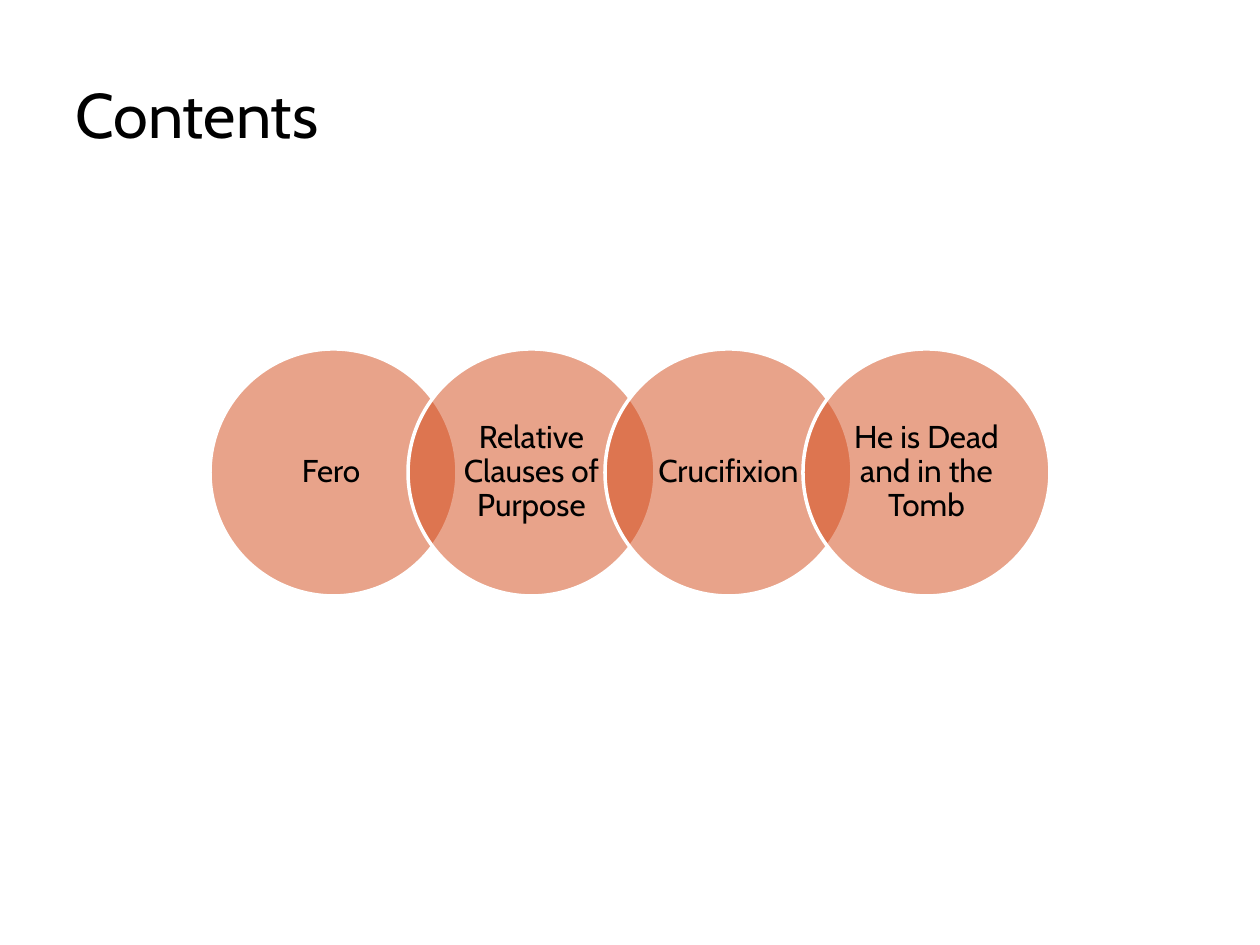
"""Build the Contents slide: a title above four overlapping topic circles."""
from dataclasses import dataclass

from lxml import etree
from pptx import Presentation
from pptx.dml.color import RGBColor
from pptx.enum.shapes import MSO_SHAPE
from pptx.enum.text import MSO_ANCHOR, MSO_AUTO_SIZE, PP_ALIGN
from pptx.oxml.ns import qn
from pptx.shapes.shapetree import GroupShapes
from pptx.text.text import TextFrame
from pptx.util import Emu, Pt

OVAL = MSO_SHAPE.OVAL
MIDDLE, BOTTOM = MSO_ANCHOR.MIDDLE, MSO_ANCHOR.BOTTOM
LEFT, CENTER = PP_ALIGN.LEFT, PP_ALIGN.CENTER
NO_FIT = MSO_AUTO_SIZE.NONE

BLACK = RGBColor(0x00, 0x00, 0x00)
WHITE = RGBColor(0xFF, 0xFF, 0xFF)
ORANGE = RGBColor(0xD3, 0x48, 0x17)
FONT = "Cabin"
PX_PER_INCH = 126

CIRCLE_LEFT, CIRCLE_TOP, CIRCLE_SIZE = 210, 349, 247
CIRCLE_STEP = 0.8 * CIRCLE_SIZE
LABEL_INSET = 36
TOPICS = ("Fero\t", "Relative Clauses of Purpose", "Crucifixion", "He is Dead and in the Tomb")


@dataclass(frozen=True)
class Box:
    left: int
    top: int
    width: int
    height: int

    def emu(self) -> tuple[Emu, Emu, Emu, Emu]:
        return px(self.left), px(self.top), px(self.width), px(self.height)

    def inset(self, by: int) -> "Box":
        return Box(self.left + by, self.top + by, self.width - 2 * by, self.height - 2 * by)


@dataclass(frozen=True)
class Topic:
    text: str
    box: Box


def px(n: int) -> Emu:
    return Emu(round(n * 914400 / PX_PER_INCH))


def set_attrs(target: object, values: dict[str, object]) -> None:
    for name, value in values.items():
        setattr(target, name, value)


def write(tf: TextFrame, text: str, size: int, frame: dict, para: dict) -> None:
    set_attrs(tf, {"word_wrap": True, "auto_size": NO_FIT, **frame})
    p = tf.paragraphs[0]
    set_attrs(p, para)
    r = p.add_run()
    r.text = text
    set_attrs(r.font, {"name": FONT, "size": Pt(size)})
    r.font.color.rgb = BLACK


def draw_topic(shapes: GroupShapes, topic: Topic) -> None:
    sp = shapes.add_shape(OVAL, *topic.box.emu())
    sp.shadow.inherit = False
    sp.fill.solid()
    sp.fill.fore_color.rgb = ORANGE
    color = sp.fill._xPr.find(qn("a:solidFill")).find(qn("a:srgbClr"))
    etree.SubElement(color, qn("a:alpha"), val="50000")
    sp.line.color.rgb = WHITE
    sp.line.width = Pt(2)

    label = shapes.add_textbox(*topic.box.inset(LABEL_INSET).emu())
    frame = {
        "vertical_anchor": MIDDLE,
        "margin_left": px(14),
        "margin_right": px(14),
        "margin_top": px(4),
        "margin_bottom": px(4),
    }
    write(label.text_frame, topic.text, 18, frame, {"alignment": CENTER, "line_spacing": 0.9})


def main() -> None:
    prs = Presentation()
    prs.slide_width, prs.slide_height = px(1260), px(945)
    s = prs.slides.add_slide(prs.slide_layouts[5])
    s.background.fill.solid()
    s.background.fill.fore_color.rgb = WHITE

    title = s.shapes.title
    title_box = Box(63, 10, 935, 147)
    set_attrs(title, dict(zip(("left", "top", "width", "height"), title_box.emu())))
    write(title.text_frame, "Contents", 36, {"vertical_anchor": BOTTOM}, {"alignment": LEFT})

    group = s.shapes.add_group_shape()
    for i, text in enumerate(TOPICS):
        left = round(CIRCLE_LEFT + i * CIRCLE_STEP)
        draw_topic(group.shapes, Topic(text, Box(left, CIRCLE_TOP, CIRCLE_SIZE, CIRCLE_SIZE)))

    prs.save("out.pptx")


if __name__ == "__main__":
    main()
